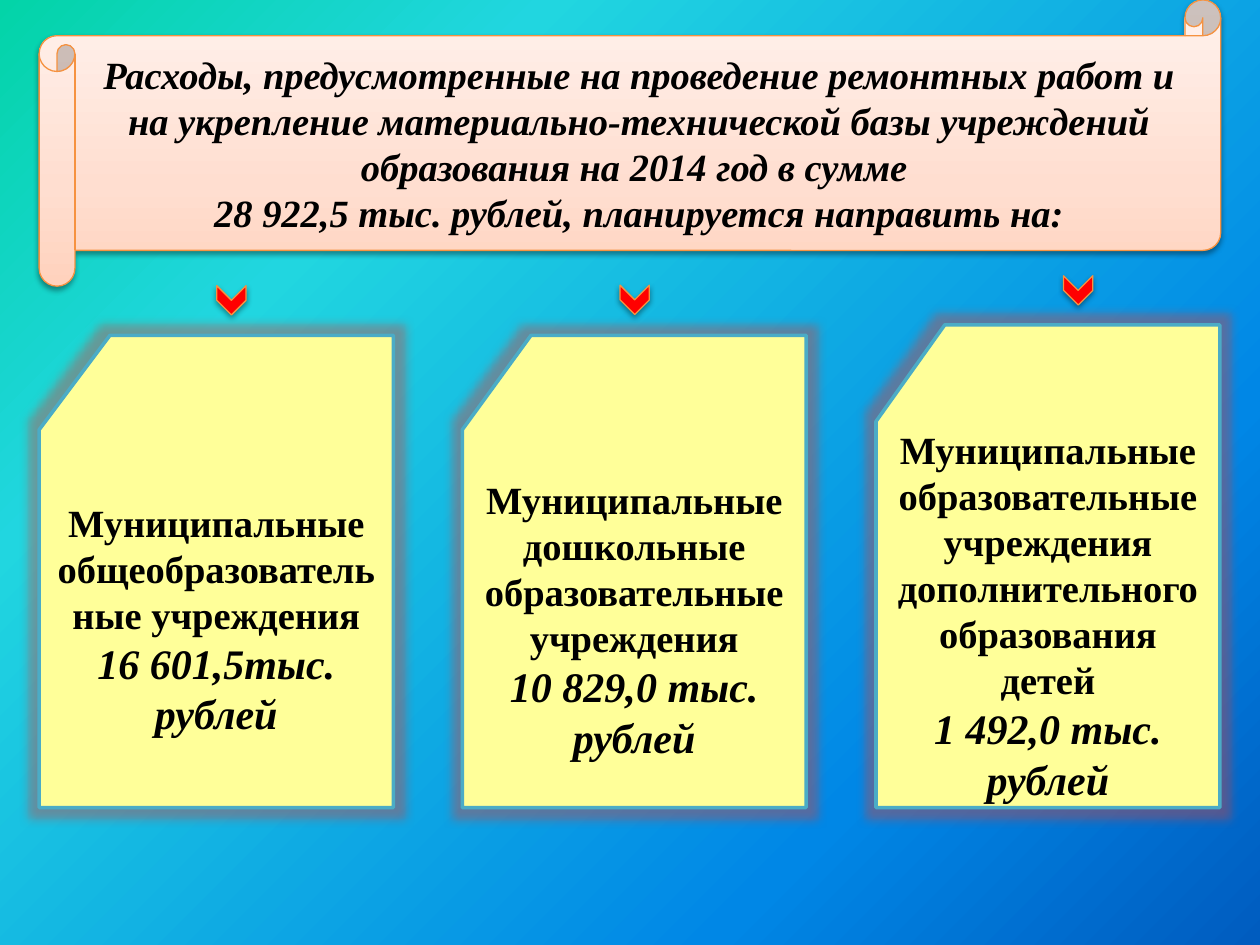
"""Build the slide on education repair spending for 2014."""
from lxml import etree
from pptx import Presentation
from pptx import util as u
from pptx.dml.color import RGBColor
from pptx.enum import shapes, text
from pptx.oxml import parse_xml
from pptx.oxml.ns import nsdecls, qn

FONT = "Times New Roman"
BACKGROUND_STOPS = [(0, "03D4A8"), (25, "21D6E0"), (75, "0087E6"), (100, "005CBF")]
BANNER_STOPS = [(0, "FFD2BD"), (35, "FFDED0"), (100, "FFF2ED")]
BANNER_BOX = (0.79, 0, 23.82, 5.77)
BANNER_TEXT = [
    "Расходы, предусмотренные на проведение ремонтных работ и на укрепление "
    "материально-технической базы учреждений образования на 2014 год в сумме ",
    "28 922,5 тыс. рублей, планируется направить на:",
]
CARD_BOTTOM = 16.28
CARDS = [
    {"left": 0.79, "top": 6.76, "width": 7.14, "arrow": (4.37, 5.76),
     "names": ["Муниципальные общеобразователь", "ные учреждения"],
     "amount": "16 601,5тыс. рублей"},
    {"left": 9.32, "top": 6.76, "width": 6.93, "arrow": (12.5, 5.75),
     "names": ["Муниципальные дошкольные образовательные учреждения"],
     "amount": "10 829,0 тыс. рублей"},
    {"left": 17.66, "top": 6.55, "width": 6.93, "arrow": (21.44, 5.56),
     "names": ["Муниципальные образовательные учреждения дополнительного образования детей"],
     "amount": "1 492,0 тыс. рублей"},
]
ARROW_SIZE = 0.59
SHADOW = ("outerShdw", {"blurRad": "40000", "dist": "20000", "dir": "5400000",
                        "rotWithShape": "0"}, "000000", 38)
GLOW = ("glow", {"rad": "139700"}, "D1423E", 40)


def color(value):
    return RGBColor.from_string(value)


def set_gradient(fill, element, stops, angle):
    fill.gradient()
    fill.gradient_angle = angle
    stop_list = next(element.iter(qn("a:gsLst")))
    for stop in list(stop_list):
        stop_list.remove(stop)
    for position, value in stops:
        stop_list.append(parse_xml(
            f'<a:gs {nsdecls("a")} pos="{position * 1000}"><a:srgbClr val="{value}"/></a:gs>'))


def add_shape(slide, kind, box, line_color, line_width, effect):
    shape = slide.shapes.add_shape(kind, *map(u.Cm, box))
    shape.line.color.rgb = color(line_color)
    shape.line.width = u.Pt(line_width)
    shape.shadow.inherit = False
    tag, attributes, value, opacity = effect
    effects = next(shape.element.iter(qn("a:effectLst")))
    node = etree.SubElement(effects, qn(f"a:{tag}"), attributes)
    tint = etree.SubElement(node, qn("a:srgbClr"), val=value)
    etree.SubElement(tint, qn("a:alpha"), val=str(opacity * 1000))
    return shape


def set_solid(shape, value):
    shape.fill.solid()
    shape.fill.fore_color.rgb = color(value)


def write_text(shape, lines):
    frame = shape.text_frame
    frame.word_wrap = True
    frame.vertical_anchor = text.MSO_ANCHOR.MIDDLE
    for index, (content, size, italic) in enumerate(lines):
        paragraph = frame.add_paragraph() if index else frame.paragraphs[0]
        paragraph.alignment = text.PP_ALIGN.CENTER
        run = paragraph.add_run()
        run.text = content
        run.font.name = FONT
        run.font.size = u.Pt(size)
        run.font.bold = True
        run.font.italic = italic
        run.font.color.rgb = color("000000")


def main():
    presentation = Presentation()
    presentation.slide_width, presentation.slide_height = u.Cm(25.4), u.Cm(19.05)
    slide = presentation.slides.add_slide(presentation.slide_layouts[6])
    set_gradient(slide.background.fill, slide.element, BACKGROUND_STOPS, 315)

    kinds = shapes.MSO_SHAPE
    banner = add_shape(slide, kinds.HORIZONTAL_SCROLL, BANNER_BOX, "F69240", 0.75, SHADOW)
    set_gradient(banner.fill, banner.element, BANNER_STOPS, 90)
    write_text(banner, [(line, 22, True) for line in BANNER_TEXT])

    for card in CARDS:
        box = (card["left"], card["top"], card["width"], CARD_BOTTOM - card["top"])
        shape = add_shape(slide, kinds.FLOWCHART_CARD, box, "4BACC6", 2, GLOW)
        set_solid(shape, "FFFF99")
        write_text(shape, [(name, 22, False) for name in card["names"]]
                   + [(card["amount"], 24, True)])

    for card in CARDS:
        box = (*card["arrow"], ARROW_SIZE, ARROW_SIZE)
        arrow = add_shape(slide, kinds.CHEVRON, box, "F69240", 0.75, SHADOW)
        set_solid(arrow, "FF0000")
        arrow.rotation = 90

    presentation.save("out.pptx")


if __name__ == "__main__":
    main()
